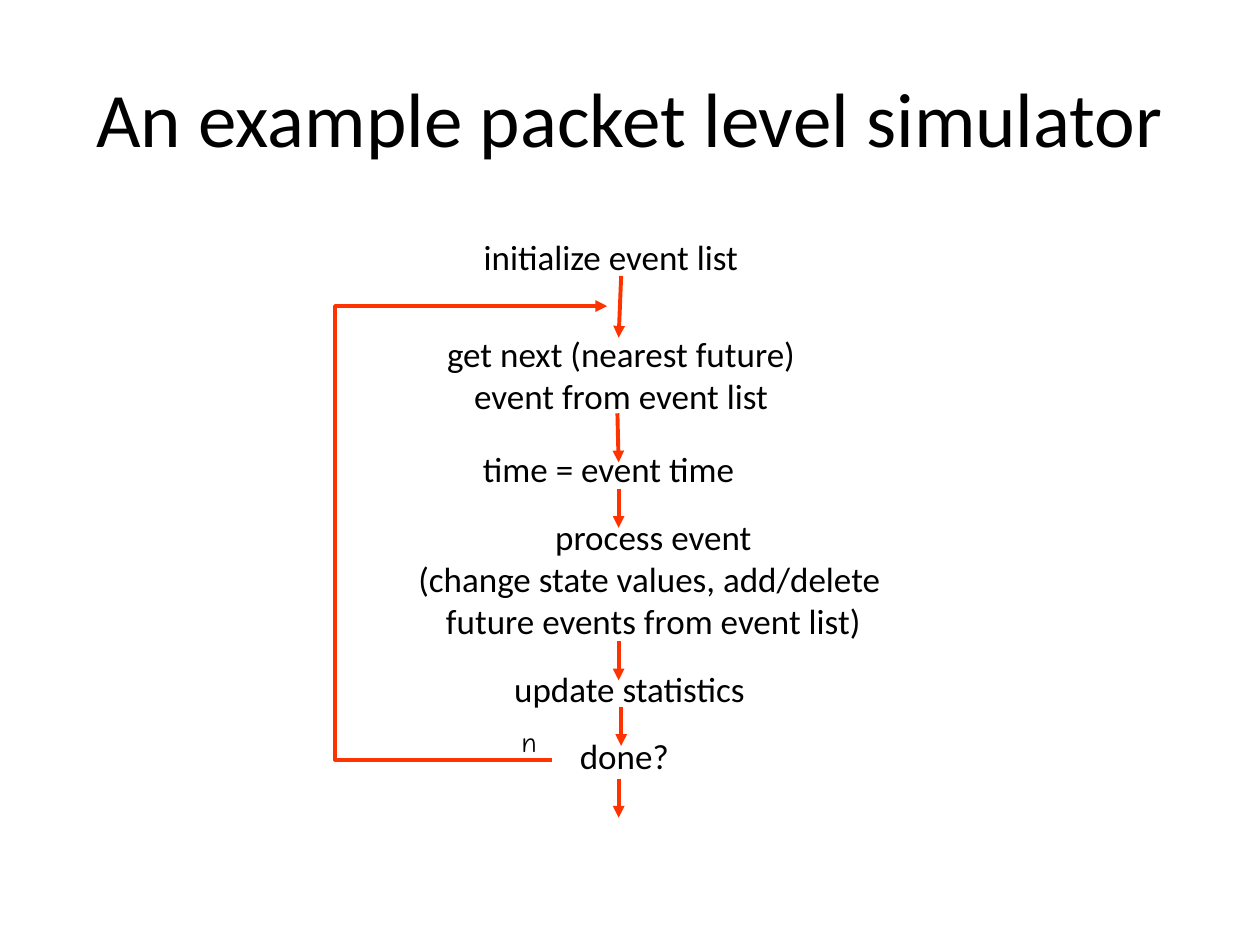
from dataclasses import dataclass

from lxml import etree
from pptx import Presentation
from pptx.dml.color import RGBColor
from pptx.enum import shapes, text
from pptx.oxml import ns
from pptx.util import Inches, Pt


@dataclass(frozen=True)
class Theme:
    ink: RGBColor = RGBColor(0x00, 0x00, 0x00)
    flow: RGBColor = RGBColor(0xFF, 0x33, 0x00)
    font: str = "Calibri"
    label_font: str = "Comic Neue"
    title_size: Pt = Pt(44)
    step_size: Pt = Pt(20)
    label_size: Pt = Pt(16)
    flow_width: Pt = Pt(2.25)


theme = Theme()


def write(frame, wording, font, size, align):
    frame.text = wording
    for paragraph in frame.paragraphs:
        paragraph.alignment = align
        for run in paragraph.runs:
            run.font.name = font
            run.font.size = size
            run.font.color.rgb = theme.ink


def style_arrow(arrow):
    arrow.line.color.rgb = theme.flow
    arrow.line.width = theme.flow_width
    properties = arrow._element.spPr
    outline = properties.find(ns.qn("a:ln"))
    etree.SubElement(outline, ns.qn("a:tailEnd"), type="triangle")
    if properties.find(ns.qn("a:effectLst")) is None:
        etree.SubElement(properties, ns.qn("a:effectLst"))


deck = Presentation()
deck.slide_width, deck.slide_height = Inches(10), Inches(7.5)
slide = deck.slides.add_slide(deck.slide_layouts[5])

title = slide.shapes.title
title.left, title.top = Inches(0.5), Inches(0.3)
title.width, title.height = Inches(9), Inches(1.25)
title.text_frame.vertical_anchor = text.MSO_ANCHOR.MIDDLE
write(title.text_frame, "An example packet level simulator",
      theme.font, theme.title_size, text.PP_ALIGN.CENTER)

center, left = text.PP_ALIGN.CENTER, text.PP_ALIGN.LEFT
step_style = (theme.font, theme.step_size, center)
steps = [
    ("initialize event list", 3.74, 1.82, 2.36, 0.43,
     (theme.font, theme.step_size, left)),
    ("get next (nearest future)\nevent from event list", 3.35, 2.59, 3.16, 0.77, step_style),
    ("time = event time", 3.67, 3.5, 2.32, 0.43, step_style),
    ("process event\n(change state values, add/delete \nfuture events from event list)",
     3.04, 4.04, 4.29, 1.1, step_style),
    ("update statistics", 3.9, 5.25, 2.19, 0.43, step_style),
    ("done?", 4.47, 5.78, 0.97, 0.43, step_style),
    ("n", 4.04, 5.7, 0.32, 0.37, (theme.label_font, theme.label_size, left)),
]
for wording, x, y, width, height, style in steps:
    step = slide.shapes.add_textbox(Inches(x), Inches(y), Inches(width), Inches(height))
    step.text_frame.word_wrap = False
    step.text_frame.auto_size = text.MSO_AUTO_SIZE.SHAPE_TO_FIT_TEXT
    write(step.text_frame, wording, *style)

flow_arrows = [
    (4.93, 2.19, 4.91, 2.68),
    (4.9, 3.28, 4.91, 3.67),
    (4.91, 3.88, 4.91, 4.19),
    (4.91, 5.09, 4.91, 5.4),
    (4.93, 5.61, 4.93, 5.92),
    (4.91, 6.18, 4.91, 6.49),
]
for ends in flow_arrows:
    flow_arrow = slide.shapes.add_connector(
        shapes.MSO_CONNECTOR.STRAIGHT, *(Inches(end) for end in ends))
    style_arrow(flow_arrow)

loop_path = [(Inches(x), Inches(y))
             for x, y in [(4.38, 6.03), (2.66, 6.03), (2.66, 2.43), (4.82, 2.43)]]
loop_builder = slide.shapes.build_freeform(*loop_path[0])
loop_builder.add_line_segments(loop_path[1:], close=False)
loop_back = loop_builder.convert_to_shape()
loop_back.fill.background()
loop_back.shadow.inherit = False
style_arrow(loop_back)

deck.save("out.pptx")
